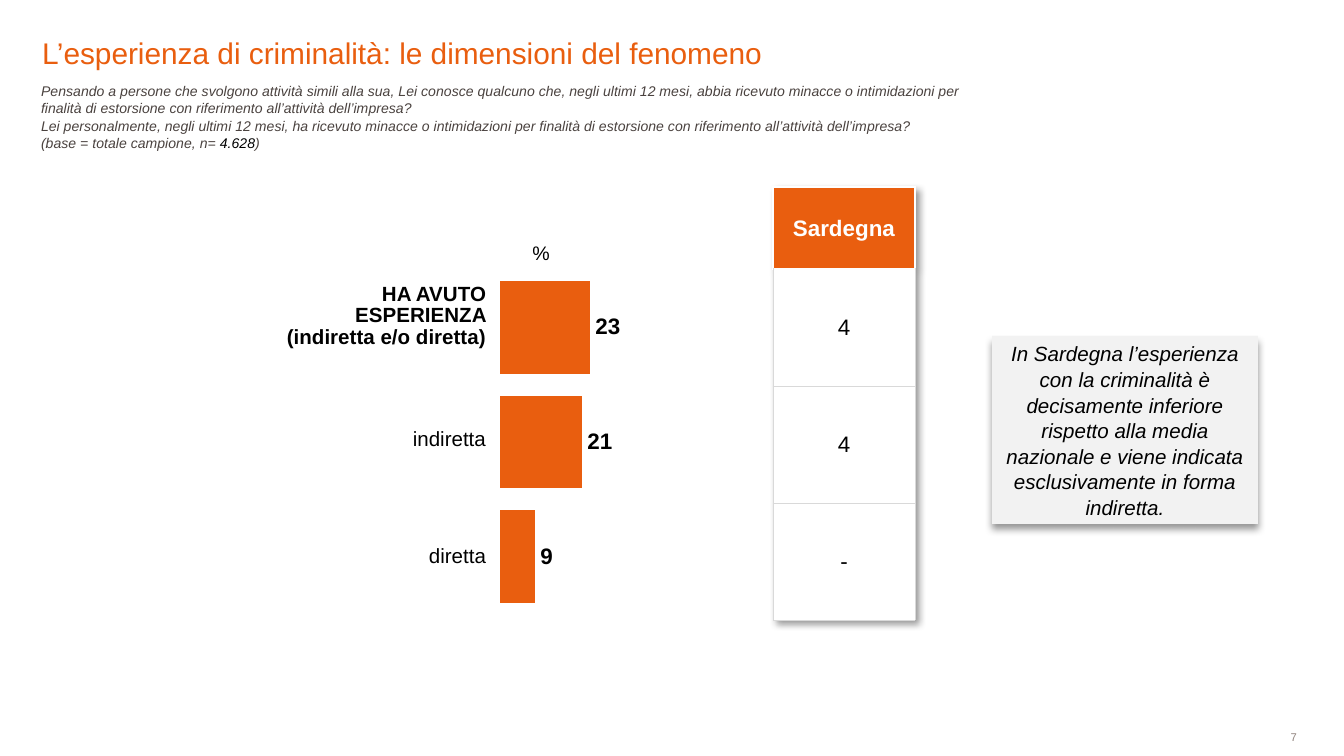
"""Build the slide on the extent of crime experience."""
from dataclasses import dataclass
from typing import Any

from lxml.etree import SubElement
from pptx import Presentation
from pptx.chart.data import CategoryChartData
from pptx.dml.color import RGBColor
from pptx.enum.chart import XL_CHART_TYPE as ChartType, XL_LABEL_POSITION as LabelPosition
from pptx.enum.shapes import MSO_SHAPE as Preset
from pptx.enum.text import MSO_ANCHOR as Anchor, MSO_AUTO_SIZE as AutoSize, PP_ALIGN as Align
from pptx.oxml import parse_xml
from pptx.oxml.ns import nsdecls, qn
from pptx.util import Emu, Pt

SCALE = 914400 / 134.4
FONT = "Arial"
COLOURS = {
    "orange": "E95E0F", "black": "000000", "white": "FFFFFF", "brown": "4A423F",
    "taupe": "928580", "pale": "F2F2F2", "rule": "D9D9D9",
}
TIGHT = (1, 1, 1, 0)
ROOMY = (13, 7, 13, 7)
NONE = (0, 0, 0, 0)


@dataclass(frozen=True)
class Span:
    text: str
    size: float
    colour: str = "black"
    bold: bool = False
    italic: bool = False


@dataclass(frozen=True)
class Area:
    left: int
    top: int
    width: int
    height: int


@dataclass(frozen=True)
class Cell:
    span: Span
    align: Align
    border: str
    border_width: float
    fill: str = ""
    spacing: float = 1.0


def px(length: int) -> Emu:
    return Emu(round(length * SCALE))


def rgb(name: str) -> RGBColor:
    return RGBColor.from_string(COLOURS[name])


def place(area: Area) -> tuple[Emu, ...]:
    return px(area.left), px(area.top), px(area.width), px(area.height)


def write(frame: Any, lines: list[list[Span]], align: Align = Align.LEFT, spacing: float = 1.0) -> None:
    for index, spans in enumerate(lines):
        para = frame.add_paragraph() if index else frame.paragraphs[0]
        para.alignment = align
        para.line_spacing = spacing
        para.space_before = Pt(0)
        for span in spans:
            run = para.add_run()
            run.text = span.text
            run.font.name = FONT
            run.font.size = Pt(span.size)
            run.font.bold = span.bold
            run.font.italic = span.italic
            run.font.color.rgb = rgb(span.colour)


def fill_box(box: Any, area: Area, lines: list[list[Span]], align: Align = Align.LEFT,
             anchor: Anchor = Anchor.MIDDLE, insets: tuple[int, ...] = ROOMY, spacing: float = 1.0) -> None:
    box.left, box.top, box.width, box.height = place(area)
    frame = box.text_frame
    frame.word_wrap = True
    frame.auto_size = AutoSize.NONE
    frame.vertical_anchor = anchor
    frame.margin_left, frame.margin_top, frame.margin_right, frame.margin_bottom = map(px, insets)
    write(frame, lines, align, spacing)


def add_text(page: Any, area: Area, span: Span, align: Align, insets: tuple[int, ...] = ROOMY) -> None:
    fill_box(page.shapes.add_textbox(*place(area)), area, [[span]], align, insets=insets)


def shadow(blur: int, distance: int, angle: int) -> Any:
    return parse_xml(
        f'<a:effectLst {nsdecls("a")}><a:outerShdw blurRad="{Pt(blur)}" dist="{Pt(distance)}" '
        f'dir="{angle * 60000}" algn="tl" rotWithShape="0"><a:srgbClr val="{COLOURS["black"]}">'
        '<a:alpha val="40000"/></a:srgbClr></a:outerShdw></a:effectLst>')


def set_borders(cell: Any, colour: str, width: float) -> None:
    properties = cell._tc.get_or_add_tcPr()
    for index, side in enumerate(("lnL", "lnR", "lnT", "lnB")):
        properties.insert(index, parse_xml(
            f'<a:{side} {nsdecls("a")} w="{Pt(width)}"><a:solidFill>'
            f'<a:srgbClr val="{COLOURS[colour]}"/></a:solidFill></a:{side}>'))


def add_column(page: Any, area: Area, heights: list[int], cells: list[Cell]) -> Any:
    table = page.shapes.add_table(len(cells), 1, *place(area)).table
    table.first_row = table.horz_banding = False
    for row, height, content in zip(table.rows, heights, cells):
        row.height = px(height)
        cell = row.cells[0]
        cell.vertical_anchor = Anchor.MIDDLE
        cell.margin_left, cell.margin_top, cell.margin_right, cell.margin_bottom = map(px, TIGHT)
        if content.fill:
            cell.fill.solid()
            cell.fill.fore_color.rgb = rgb(content.fill)
        else:
            cell.fill.background()
        set_borders(cell, content.border, content.border_width)
        write(cell.text_frame, [[content.span]], content.align, content.spacing)
    return table


def add_bars(page: Any, area: Area, values: list[int]) -> None:
    data = CategoryChartData(number_format="0")
    data.categories = [str(number) for number in range(1, len(values) + 1)]
    data.add_series("Series 1", values)
    chart = page.shapes.add_chart(ChartType.BAR_CLUSTERED, *place(area), data).chart
    chart.has_legend = chart.has_title = False
    chart.font.name = "Roboto"
    chart.font.size = Pt(18.2)
    chart.font.color.rgb = rgb("black")
    chart.category_axis.reverse_order = True
    chart.value_axis.minimum_scale = 0
    chart.value_axis.maximum_scale = 100
    chart.value_axis.major_unit = 10
    chart.value_axis.has_major_gridlines = False
    chart.category_axis.visible = chart.value_axis.visible = False
    plot = chart.plots[0]
    plot.gap_width = 24
    plot.vary_by_categories = False
    fill = plot.series[0].format.fill
    fill.solid()
    fill.fore_color.rgb = rgb("orange")
    plot.has_data_labels = True
    labels = plot.data_labels
    labels.show_value = True
    labels.number_format = "0"
    labels.number_format_is_linked = False
    labels.position = LabelPosition.OUTSIDE_END
    labels.font.name = FONT
    labels.font.size = Pt(12)
    labels.font.bold = True
    labels.font.color.rgb = rgb("black")
    plot_area = chart._chartSpace.chart.plotArea
    for layout in plot_area.findall(qn("c:layout")):
        plot_area.remove(layout)
    layout = parse_xml(f'<c:layout {nsdecls("c")}><c:manualLayout/></c:layout>')
    settings = {"layoutTarget": "inner", "xMode": "edge", "yMode": "edge",
                "x": "0.28", "y": "0", "w": "0.5", "h": "0.72"}
    for tag, value in settings.items():
        SubElement(layout[0], qn(f"c:{tag}")).set("val", value)
    plot_area.insert(0, layout)


def main() -> None:
    deck = Presentation()
    deck.slide_width, deck.slide_height = px(1344), px(756)
    page = deck.slides.add_slide(deck.slide_layouts[1])
    title, question = page.placeholders
    fill_box(title, Area(42, 0, 841, 71),
             [[Span("L’esperienza di criminalità: le dimensioni del fenomeno", 16, "orange")]],
             anchor=Anchor.BOTTOM, insets=NONE)
    wording = [
        ["Pensando a persone che svolgono attività simili alla sua, Lei conosce qualcuno che, negli ultimi 12 mesi, "
         "abbia ricevuto minacce o intimidazioni per finalità di estorsione con riferimento all’attività dell’impresa?"],
        ["Lei personalmente, negli ultimi 12 mesi, ha ricevuto minacce o intimidazioni per finalità di estorsione "
         "con riferimento all’attività dell’impresa?"],
        ["(base = totale campione, n= ", "4.628", ")"],
    ]
    fill_box(question, Area(28, 75, 960, 98),
             [[Span(text, 7.5, "black" if text == "4.628" else "brown", italic=True) for text in line]
              for line in wording], anchor=Anchor.TOP, spacing=1.03)
    for para in question.text_frame.paragraphs:
        properties = para._p.get_or_add_pPr()
        properties.set("marL", "0")
        properties.set("indent", "0")
        SubElement(properties, qn("a:buNone"))

    add_bars(page, Area(280, 270, 785, 478), [23, 21, 9])
    add_text(page, Area(425, 216, 232, 74), Span("%", 10.5), Align.CENTER)
    names = ["HA AVUTO ESPERIENZA (indiretta e/o diretta)", "indiretta", "diretta"]
    add_column(page, Area(261, 251, 226, 364), [130, 117, 117],
               [Cell(Span(name, 11, bold=not index), Align.RIGHT, "white", 1, spacing=0.95)
                for index, name in enumerate(names)])
    header = Cell(Span("Sardegna", 12, "white", True), Align.CENTER, "white", 1, "orange")
    figures = [Cell(Span(text, 12), Align.CENTER, "rule", 0.25, "white") for text in ("4", "4", "-")]
    region = add_column(page, Area(773, 187, 142, 433), [82, 117, 117, 117], [header, *figures])
    region._tbl.tblPr.insert(0, shadow(4, 3, 45))

    area = Area(992, 336, 266, 188)
    note = page.shapes.add_shape(Preset.RECTANGLE, *place(area))
    note.fill.solid()
    note.fill.fore_color.rgb = rgb("pale")
    note.line.fill.background()
    note._element.spPr.append(shadow(4, 3, 90))
    fill_box(note, area, [[Span(
        "In Sardegna l’esperienza con la criminalità è decisamente inferiore rispetto alla media nazionale "
        "e viene indicata esclusivamente in forma indiretta.", 11, italic=True)]], Align.CENTER, spacing=1.04)
    add_text(page, Area(1117, 731, 180, 12), Span("7", 6, "taupe"), Align.RIGHT, NONE)
    deck.save("out.pptx")


if __name__ == "__main__":
    main()
